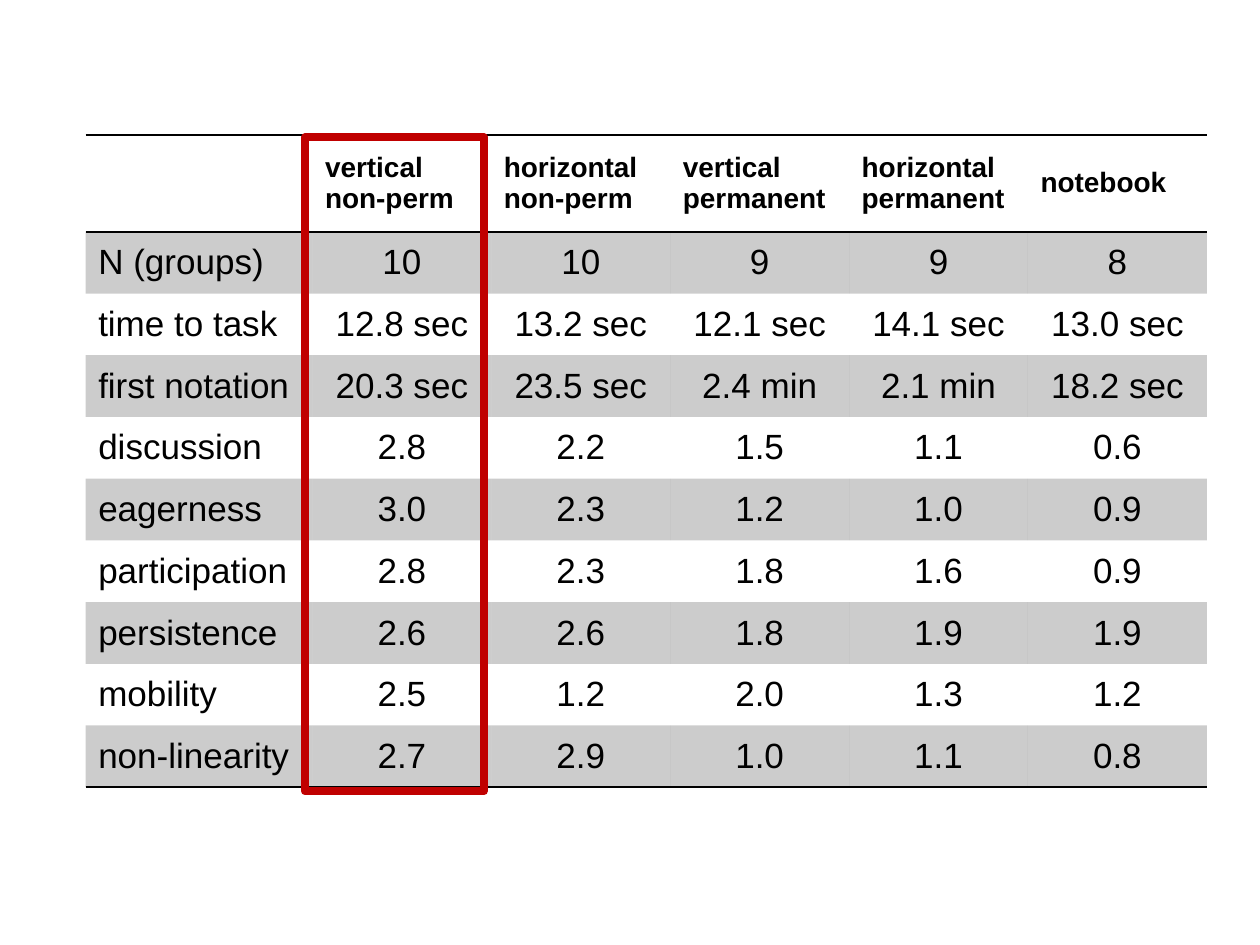
from lxml import etree
from pptx import Presentation
from pptx import util as u
from pptx.dml import color
from pptx.enum import shapes, text
from pptx.oxml import ns

COLORS = {"ink": "000000", "highlight": "C00000"}
NO_STYLE = "{2D5ABB26-0587-4C30-8999-92F81FD0307C}"
LEFT, TOP = 0.68, 1.07
LABEL_WIDTH, VALUE_WIDTH = 1.8, 1.42
HEADER_HEIGHT, ROW_HEIGHT = 0.77, 0.49

HEADERS = ["", "vertical\nnon-perm", "horizontal non-perm", "vertical permanent",
           "horizontal permanent", "notebook"]
MEASURES = [
    ["N (groups)", "10", "10", "9", "9", "8"],
    ["time to task", "12.8 sec", "13.2 sec", "12.1 sec", "14.1 sec", "13.0 sec"],
    ["first notation", "20.3 sec", "23.5 sec", "2.4 min", "2.1 min", "18.2 sec"],
    ["discussion", "2.8", "2.2", "1.5", "1.1", "0.6"],
    ["eagerness", "3.0", "2.3", "1.2", "1.0", "0.9"],
    ["participation", "2.8", "2.3", "1.8", "1.6", "0.9"],
    ["persistence", "2.6", "2.6", "1.8", "1.9", "1.9"],
    ["mobility", "2.5", "1.2", "2.0", "1.3", "1.2"],
    ["non-linearity", "2.7", "2.9", "1.0", "1.1", "0.8"],
]


def rgb(name):
    return color.RGBColor.from_string(COLORS[name])


class SlideBuilder:
    font = "Arial"
    header_size = 16
    body_size = 20
    band_opacity = 20

    def __init__(self, slide):
        self.slide = slide

    def table(self, rows):
        width = LABEL_WIDTH + VALUE_WIDTH * (len(rows[0]) - 1)
        height = HEADER_HEIGHT + ROW_HEIGHT * (len(rows) - 1)
        shape = self.slide.shapes.add_table(
            len(rows), len(rows[0]), u.Inches(LEFT), u.Inches(TOP),
            u.Inches(width), u.Inches(height))
        table = shape.table
        table.first_row = table.horz_banding = False
        next(table._tbl.iter(ns.qn("a:tableStyleId"))).text = NO_STYLE
        for index, column in enumerate(table.columns):
            column.width = u.Inches(VALUE_WIDTH if index else LABEL_WIDTH)
        last = len(rows) - 1
        for row_index, values in enumerate(rows):
            header = row_index == 0
            table.rows[row_index].height = u.Inches(HEADER_HEIGHT if header else ROW_HEIGHT)
            edges = ["lnT", "lnB"] if header else ["lnB"] if row_index == last else []
            for column_index, value in enumerate(values):
                cell = table.cell(row_index, column_index)
                self.cell_text(cell, value, header, centered=not header and column_index > 0)
                for edge in edges:
                    self.border(cell, edge)
                if row_index % 2:
                    self.band(cell)
                else:
                    cell.fill.background()

    def cell_text(self, cell, value, header, centered):
        cell.text_frame.text = value
        cell.vertical_anchor = text.MSO_ANCHOR.MIDDLE
        for paragraph in cell.text_frame.paragraphs:
            paragraph.alignment = text.PP_ALIGN.CENTER if centered else text.PP_ALIGN.LEFT
            for run in paragraph.runs:
                run.font.name = self.font
                run.font.size = u.Pt(self.header_size if header else self.body_size)
                run.font.bold = header
                run.font.color.rgb = rgb("ink")

    def border(self, cell, edge):
        properties = cell._tc.get_or_add_tcPr()
        line = etree.SubElement(properties, ns.qn(f"a:{edge}"), w=str(u.Pt(1)))
        fill = etree.SubElement(line, ns.qn("a:solidFill"))
        etree.SubElement(fill, ns.qn("a:srgbClr"), val=COLORS["ink"])

    def band(self, cell):
        cell.fill.solid()
        cell.fill.fore_color.rgb = rgb("ink")
        fill_color = cell._tc.tcPr.find(ns.qn("a:solidFill"))[0]
        etree.SubElement(fill_color, ns.qn("a:alpha"), val=str(self.band_opacity * 1000))

    def frame(self, left, top, width, height):
        shape = self.slide.shapes.add_shape(
            shapes.MSO_SHAPE.RECTANGLE, u.Inches(left), u.Inches(top),
            u.Inches(width), u.Inches(height))
        shape.shadow.inherit = False
        shape.fill.background()
        shape.line.color.rgb = rgb("highlight")
        shape.line.width = u.Pt(4.5)


def main():
    presentation = Presentation()
    presentation.slide_width = u.Inches(10)
    presentation.slide_height = u.Inches(7.5)
    builder = SlideBuilder(presentation.slides.add_slide(presentation.slide_layouts[6]))
    builder.table([HEADERS] + MEASURES)
    builder.frame(2.42, 1.09, VALUE_WIDTH, 5.19)
    presentation.save("out.pptx")


if __name__ == "__main__":
    main()
